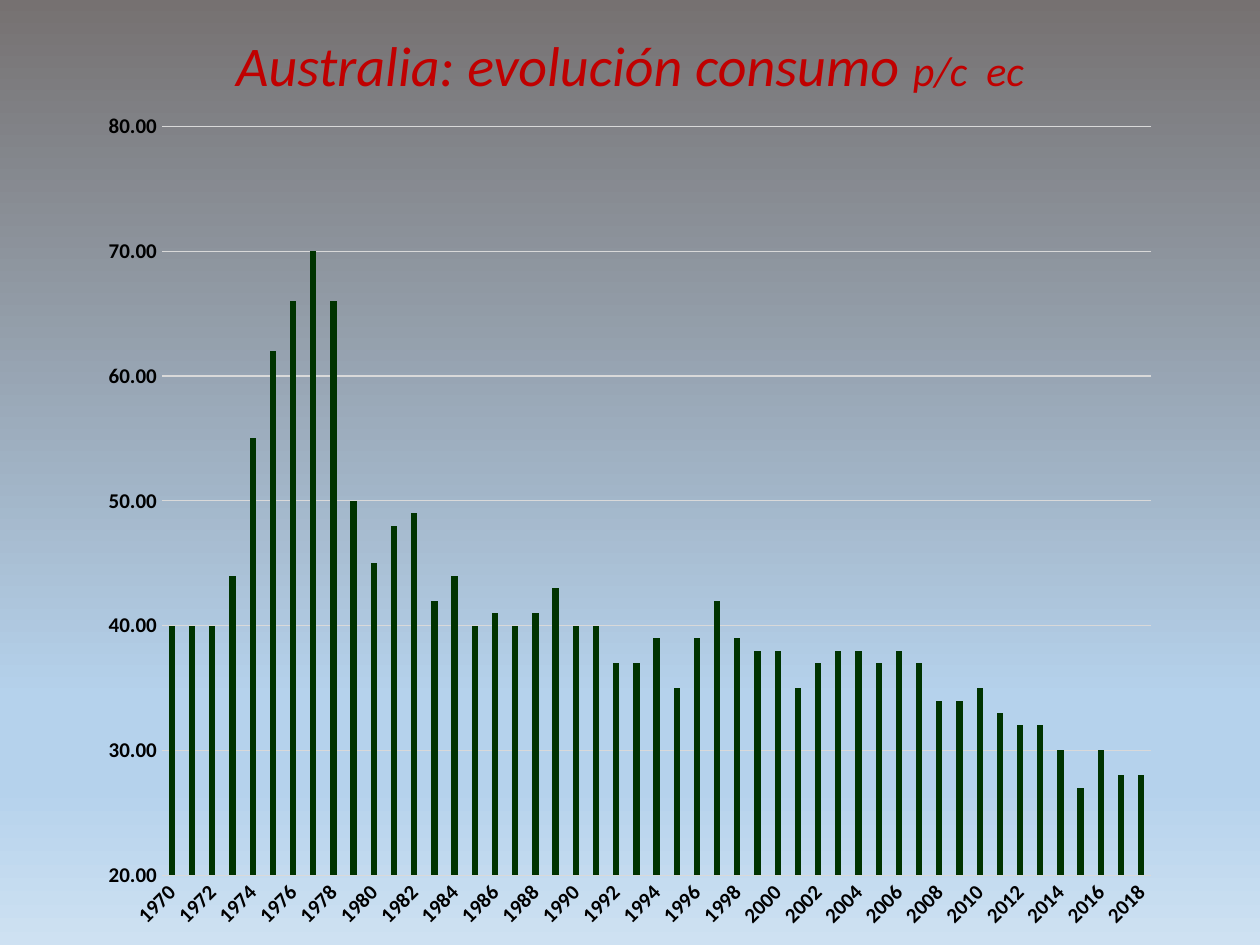
import copy

import pptx
import pptx.chart.data
import pptx.dml.color
import pptx.enum.chart
import pptx.enum.text
import pptx.util

Inches = pptx.util.Inches
Pt = pptx.util.Pt
RGBColor = pptx.dml.color.RGBColor

RED = RGBColor(0xC0, 0x00, 0x00)
GREEN = RGBColor(0x00, 0x33, 0x00)
BLACK = RGBColor(0x00, 0x00, 0x00)
GRID = RGBColor(0xD9, 0xD9, 0xD9)
SKY = RGBColor(0xB5, 0xD2, 0xEC)
BACKDROP = [
    (0, RGBColor(0x76, 0x71, 0x71)),
    (0.74, SKY),
    (0.83, SKY),
    (1, RGBColor(0xCE, 0xE1, 0xF2)),
]

FIRST_YEAR = 1970
CONSUMPTION = [
    40, 40, 40, 44, 55, 62, 66, 70, 66, 50,
    45, 48, 49, 42, 44, 40, 41, 40, 41, 43,
    40, 40, 37, 37, 39, 35, 39, 42, 39, 38,
    38, 35, 37, 38, 38, 37, 38, 37, 34, 34,
    35, 33, 32, 32, 30, 27, 30, 28, 28,
]


class SlideBuilder:
    """Holds the style and the current slide."""

    font_name = "Calibri"

    def __init__(self, prs):
        self.slide = prs.slides.add_slide(prs.slide_layouts[5])

    def style_font(self, font, size, color, bold=None, italic=None):
        font.name = self.font_name
        font.size = Pt(size)
        font.color.rgb = color
        font.bold = bold
        font.italic = italic

    def background(self, stops):
        """Fill the background from top to bottom with (position, colour) stops."""
        fill = self.slide.background.fill
        fill.gradient()
        fill.gradient_angle = 270
        stop_list = self.slide.element.xpath(".//a:gsLst")[0]
        while len(stop_list) < len(stops):
            stop_list.append(copy.deepcopy(stop_list[0]))
        for stop, (position, color) in zip(fill.gradient_stops, stops):
            stop.position = position
            stop.color.rgb = color

    def title(self, box, runs):
        sp = self.slide.shapes.title
        sp.left, sp.top, sp.width, sp.height = map(Inches, box)
        tf = sp.text_frame
        tf.vertical_anchor = pptx.enum.text.MSO_ANCHOR.MIDDLE
        p = tf.paragraphs[0]
        p.alignment = pptx.enum.text.PP_ALIGN.CENTER
        p.line_spacing = 0.9
        for text, size in runs:
            r = p.add_run()
            r.text = text
            self.style_font(r.font, size, RED, italic=True)

    def axis(self, axis):
        axis.major_tick_mark = pptx.enum.chart.XL_TICK_MARK.NONE
        axis.minor_tick_mark = pptx.enum.chart.XL_TICK_MARK.NONE
        self.style_font(axis.tick_labels.font, 12, BLACK, bold=True)

    def line(self, line):
        line.color.rgb = GRID
        line.width = Pt(0.75)

    def column_chart(self, box, categories, values):
        data = pptx.chart.data.CategoryChartData(number_format="0.00")
        data.categories = categories
        data.add_series("Consumo p/c", values)
        chart = self.slide.shapes.add_chart(
            pptx.enum.chart.XL_CHART_TYPE.COLUMN_CLUSTERED,
            *map(Inches, box), data).chart
        chart.has_legend = False
        chart.has_title = False
        self.style_font(chart.font, 10, BLACK)

        plot = chart.plots[0]
        plot.vary_by_categories = False
        plot.gap_width = 219
        plot.overlap = -27
        fill = plot.series[0].format.fill
        fill.solid()
        fill.fore_color.rgb = GREEN

        years = chart.category_axis
        self.axis(years)
        self.line(years.format.line)
        body = years._element.xpath("c:txPr/a:bodyPr")[0]
        body.set("rot", "-2700000")
        body.set("vert", "horz")

        amounts = chart.value_axis
        self.axis(amounts)
        amounts.format.line.fill.background()
        self.line(amounts.major_gridlines.format.line)
        amounts.minimum_scale = 20
        amounts.maximum_scale = 80
        amounts.major_unit = 10
        amounts.tick_labels.number_format = "0.00"
        amounts.tick_labels.number_format_is_linked = False


def main():
    prs = pptx.Presentation()
    prs.slide_width = Inches(10)
    prs.slide_height = Inches(7.5)

    s = SlideBuilder(prs)
    s.background(BACKDROP)
    s.title((0.69, 0, 8.62, 1.08),
            [("Australia: evolución consumo ", 32), ("p/c  ec", 24)])
    years = [str(FIRST_YEAR + i) for i in range(len(CONSUMPTION))]
    s.column_chart((0.69, 0.77, 8.62, 6.73), years, CONSUMPTION)
    prs.save("out.pptx")


if __name__ == "__main__":
    main()
